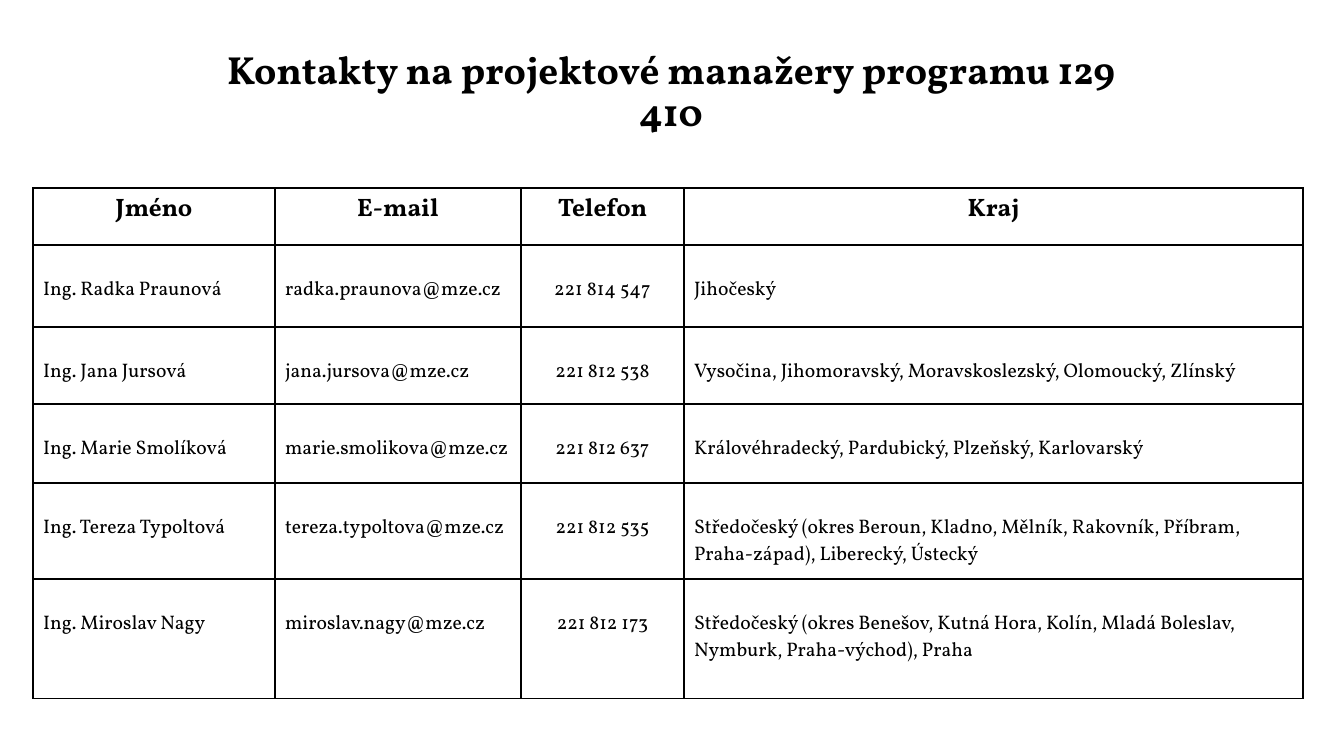
from lxml.etree import SubElement as Sub
from pptx import Presentation
from pptx.dml.color import RGBColor as RGB
from pptx.enum.text import MSO_ANCHOR as Anchor, MSO_AUTO_SIZE as Auto, PP_ALIGN as Align
from pptx.oxml.ns import qn
from pptx.util import Pt

PX = 914400 / 100.8
THEME = {"font": "Vollkorn", "ink": "000000", "title": 28, "head": 18, "body": 14, "line": 1}

HEAD = ["Jméno", "E-mail", "Telefon", "Kraj"]
STAFF = [
    ["Ing. Radka Praunová", "radka.praunova@mze.cz", "221 814 547", "Jihočeský"],
    ["Ing. Jana Jursová", "jana.jursova@mze.cz", "221 812 538",
     "Vysočina, Jihomoravský, Moravskoslezský, Olomoucký, Zlínský"],
    ["Ing. Marie Smolíková", "marie.smolikova@mze.cz", "221 812 637",
     "Královéhradecký, Pardubický, Plzeňský, Karlovarský"],
    ["Ing. Tereza Typoltová", "tereza.typoltova@mze.cz", "221 812 535",
     "Středočeský (okres Beroun, Kladno, Mělník, Rakovník, Příbram, "
     "Praha-západ), Liberecký, Ústecký"],
    ["Ing. Miroslav Nagy", "miroslav.nagy@mze.cz", "221 812 173",
     "Středočeský (okres Benešov, Kutná Hora, Kolín, Mladá Boleslav, "
     "Nymburk, Praha-východ), Praha"],
]
COLS = [242, 246, 163, 619]
ROWS = [57, 82, 77, 79, 96, 120]


def px(n):
    return round(n * PX)


def put(frame, text, size="body", bold=False, align=Align.LEFT, space=1.0):
    para = frame.paragraphs[0]
    para.alignment, para.line_spacing = align, space
    run = para.add_run()
    run.text = text
    font = run.font
    font.name, font.size, font.bold = THEME["font"], Pt(THEME[size]), bold
    font.color.rgb = RGB.from_string(THEME["ink"])


deck = Presentation()
deck.slide_width, deck.slide_height = px(1344), px(756)
slide = deck.slides.add_slide(deck.slide_layouts[5])

# Title
title = slide.shapes.title
title.left, title.top, title.width, title.height = map(px, (188, 55, 966, 75))
frame = title.text_frame
frame.word_wrap, frame.auto_size = True, Auto.NONE
frame.vertical_anchor = Anchor.MIDDLE
put(frame, "Kontakty na projektové manažery programu 129 410",
    size="title", bold=True, align=Align.CENTER, space=0.9)

# Contact table
table = slide.shapes.add_table(len(ROWS), len(COLS), px(33), px(188),
                               px(sum(COLS)), px(sum(ROWS))).table
table.first_row = table.horz_banding = False
for col, wide in zip(table.columns, COLS):
    col.width = px(wide)
for row, high in zip(table.rows, ROWS):
    row.height = px(high)

for r, texts in enumerate([HEAD] + STAFF):
    for c, text in enumerate(texts):
        cell = table.cell(r, c)
        top = r == 0
        cell.margin_top = px(5 if top else 32)
        # Borders come before the fill
        props = cell._tc.get_or_add_tcPr()
        for side in ("lnL", "lnR", "lnT", "lnB"):
            line = Sub(props, qn("a:" + side), w=str(Pt(THEME["line"])))
            Sub(Sub(line, qn("a:solidFill")), qn("a:srgbClr"), val=THEME["ink"])
        cell.fill.background()
        put(cell.text_frame, text, size="head" if top else "body", bold=top,
            align=Align.CENTER if top or c == 2 else Align.LEFT)

deck.save("out.pptx")
